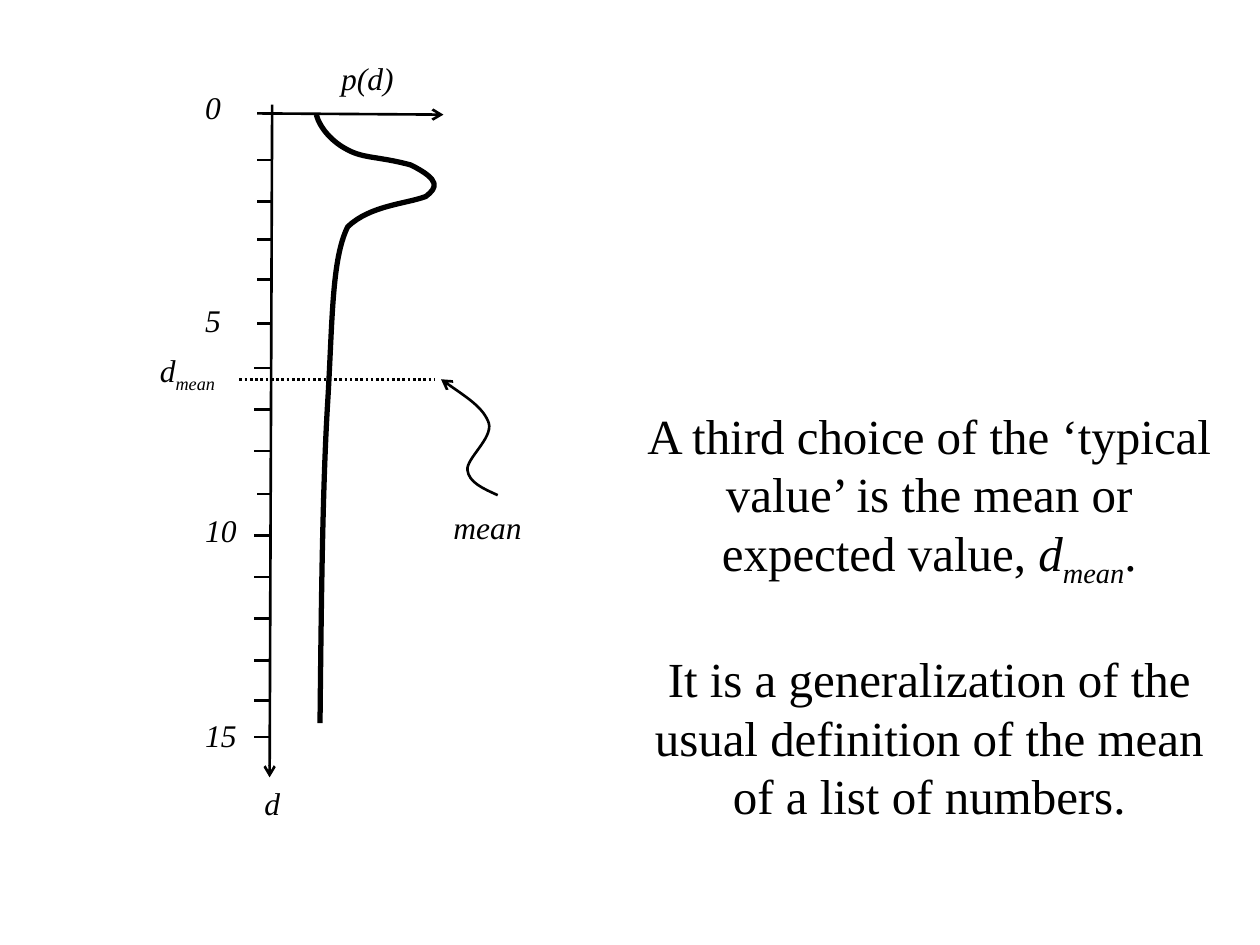
"""Build a slide showing the mean of a probability density p(d) on a depth axis."""
from pptx import Presentation
from pptx.dml.color import RGBColor
from pptx.enum.dml import MSO_LINE
from pptx.enum.shapes import MSO_CONNECTOR
from pptx.enum.text import MSO_ANCHOR, MSO_AUTO_SIZE, PP_ALIGN
from pptx.oxml.ns import qn
from pptx.util import Inches, Pt
from lxml.etree import SubElement


def add_span(para, text, size=18, italic=True, baseline=0, color="000000"):
    span = para.add_run()
    span.text = text
    span.font.name = "Times New Roman"
    span.font.size = Pt(size)
    span.font.italic = italic
    span.font.color.rgb = RGBColor.from_string(color)
    if baseline:
        span.font._element.set("baseline", str(baseline * 1000))


def style_line(shape, width=1.5, arrow=None, dash=None, color="000000"):
    shape.line.color.rgb = RGBColor.from_string(color)
    shape.line.width = Pt(width)
    if dash:
        shape.line.dash_style = dash
    properties = shape._element.spPr
    if arrow:
        SubElement(properties.find(qn("a:ln")), qn(f"a:{arrow}"), type="arrow")
    SubElement(properties, qn("a:effectLst"))


deck = Presentation()
deck.slide_width = Inches(10)
deck.slide_height = Inches(7.5)
page = deck.slides.add_slide(deck.slide_layouts[6])

lines = [
    (2.16, 0.83, 2.14, 6.17, "tailEnd", None),
    (2.04, 0.9, 3.52, 0.91, "tailEnd", None),
    (1.9, 3.01, 3.45, 3.01, None, MSO_LINE.ROUND_DOT),
]
tick_groups = [
    (2.04, [1.27, 1.6, 1.9, 2.22, 2.57, 3.92]),
    (2.02, [2.92, 3.25, 3.58, 4.25, 4.58, 4.91, 5.24, 5.56, 5.85]),
]
for left, depths in tick_groups:
    lines += [(left + 0.12, depth, left, depth, None, None) for depth in depths]
for x1, y1, x2, y2, arrow, dash in lines:
    connector = page.shapes.add_connector(
        MSO_CONNECTOR.STRAIGHT, Inches(x1), Inches(y1), Inches(x2), Inches(y2))
    style_line(connector, arrow=arrow, dash=dash)

density = [
    (2.51, 0.91), (2.54, 1.02), (2.64, 1.13), (2.76, 1.19),
    (2.89, 1.26), (3, 1.24), (3.26, 1.31),
    (3.5, 1.43), (3.47, 1.49), (3.38, 1.56),
    (3.22, 1.62), (2.94, 1.63), (2.76, 1.8),
    (2.63, 2.06), (2.64, 2.56), (2.6, 3.21),
    (2.56, 3.87), (2.55, 4.8), (2.54, 5.74),
]
pointer = [
    (3.5, 3.01), (3.67, 3.13), (3.84, 3.24), (3.88, 3.36),
    (3.91, 3.48), (3.7, 3.64), (3.71, 3.73),
    (3.72, 3.83), (3.84, 3.88), (3.95, 3.93),
]
for controls, width, arrow in [(density, 3, None), (pointer, 1.5, "headEnd")]:
    start, *points = [(Inches(x), Inches(y)) for x, y in controls]
    builder = page.shapes.build_freeform(*start)
    builder.add_line_segments(points, close=False)
    curve = builder.convert_to_shape()
    outline = next(curve._element.iter(qn("a:path")))
    segments = outline.findall(qn("a:lnTo"))
    for first in range(0, len(segments), 3):
        bezier = SubElement(outline, qn("a:cubicBezTo"))
        for segment in segments[first:first + 3]:
            bezier.append(segment[0])
            outline.remove(segment)
    curve.fill.background()
    style_line(curve, width=width, arrow=arrow)

labels = [
    ("0", "", 1.53, 0.65, 0.74),
    ("5", "", 1.53, 2.34, 0.74),
    ("10", "", 1.53, 4.01, 0.74),
    ("15", "", 1.53, 5.63, 0.74),
    ("d", "", 2, 6.17, 0.74),
    ("p(d)", "", 2.61, 0.42, 0.74),
    ("mean", "", 3.5, 3.98, 0.99),
    ("d", "mean", 1.17, 2.74, 0.87),
]
for text, subscript, left, top, width in labels:
    box = page.shapes.add_textbox(Inches(left), Inches(top), Inches(width), Inches(0.4))
    box.text_frame.word_wrap = True
    box.text_frame.auto_size = MSO_AUTO_SIZE.SHAPE_TO_FIT_TEXT
    para = box.text_frame.paragraphs[0]
    add_span(para, text)
    if subscript:
        add_span(para, subscript, baseline=-25)

box = page.shapes.add_textbox(Inches(5), Inches(3.17), Inches(4.75), Inches(3.42))
frame = box.text_frame
frame.word_wrap = True
frame.vertical_anchor = MSO_ANCHOR.MIDDLE
choice = frame.paragraphs[0]
add_span(choice, "A third choice of the ‘typical value’ is the mean or expected value, ",
         size=28, italic=False)
add_span(choice, "d", size=28)
add_span(choice, "mean", size=28, baseline=-25)
add_span(choice, ".", size=28, italic=False)
meaning = frame.add_paragraph()
meaning.space_before = Pt(33.5)
add_span(meaning, "It is a generalization of the usual definition of the mean of a list of numbers.",
         size=28, italic=False)
for para in frame.paragraphs:
    para.alignment = PP_ALIGN.CENTER

deck.save("out.pptx")
